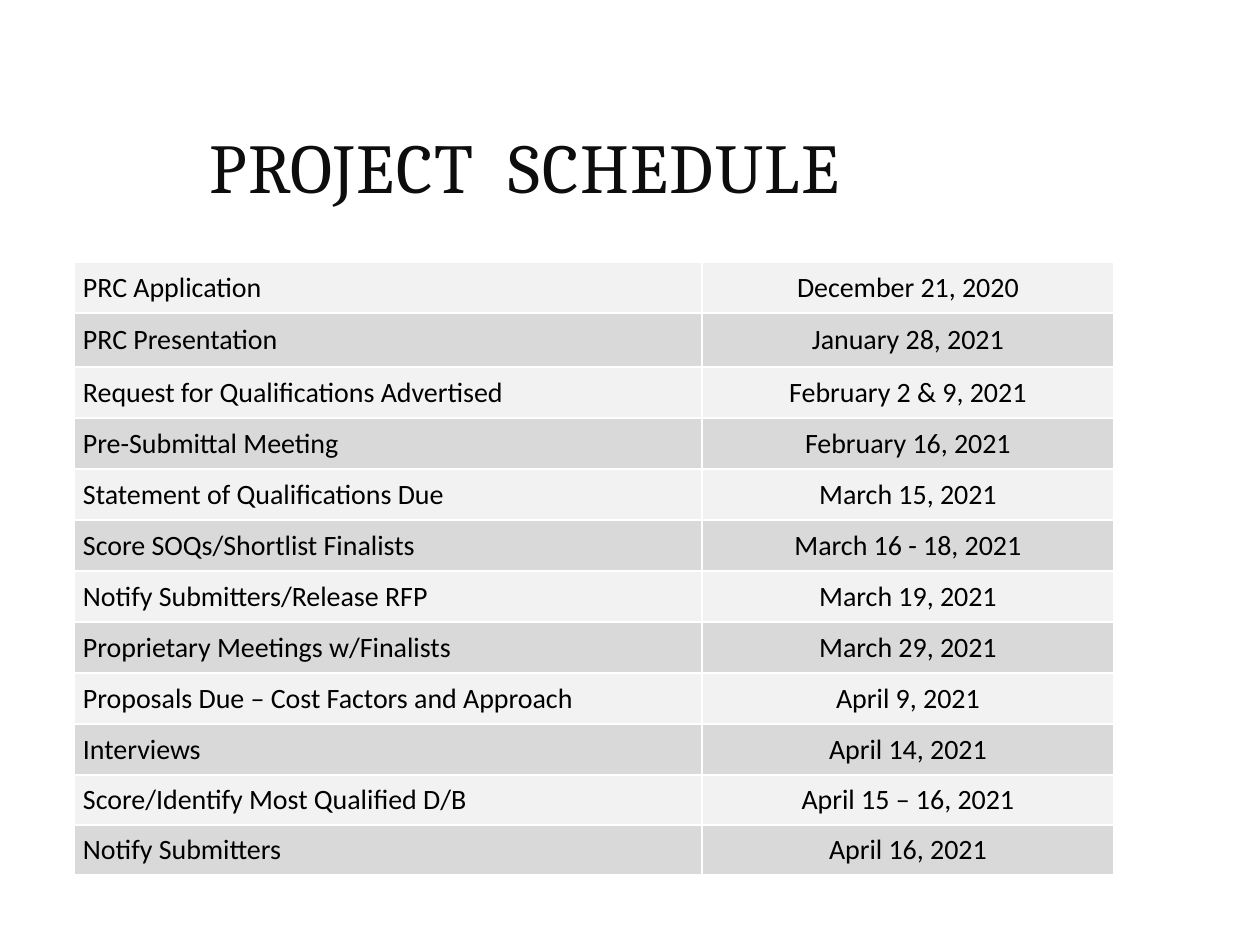
from pptx import Presentation
from pptx.dml.color import RGBColor
from pptx.enum.text import MSO_ANCHOR, MSO_AUTO_SIZE, PP_ALIGN
from pptx.util import Pt

TITLE = "PROJECT  SCHEDULE"
STEPS = [
    ("PRC Application", "December 21, 2020"),
    ("PRC Presentation", "January 28, 2021"),
    ("Request for Qualifications Advertised", "February 2 & 9, 2021"),
    ("Pre-Submittal Meeting", "February 16, 2021"),
    ("Statement of Qualifications Due", "March 15, 2021"),
    ("Score SOQs/Shortlist Finalists", "March 16 - 18, 2021"),
    ("Notify Submitters/Release RFP", "March 19, 2021"),
    ("Proprietary Meetings w/Finalists", "March 29, 2021"),
    ("Proposals Due – Cost Factors and Approach", "April 9, 2021"),
    ("Interviews", "April 14, 2021"),
    ("Score/Identify Most Qualified D/B", "April 15 – 16, 2021"),
    ("Notify Submitters", "April 16, 2021"),
]
COLS = [628, 412]
ROWS = [51, 54] + [51] * 8 + [50] * 2
ALIGNS = [PP_ALIGN.LEFT, PP_ALIGN.CENTER]

INK = RGBColor(0x0D, 0x0D, 0x0D)
BLACK = RGBColor(0, 0, 0)
BANDS = [RGBColor(0xF2, 0xF2, 0xF2), RGBColor(0xD9, 0xD9, 0xD9)]


def px(n):
    return n * 914400 // 126


def style(para, font, size, color, align):
    para.alignment = align
    para.font.name = font
    para.font.size = Pt(size)
    para.font.color.rgb = color


deck = Presentation()
deck.slide_width, deck.slide_height = px(1260), px(945)
slide = deck.slides.add_slide(deck.slide_layouts[5])

# Title
title = slide.shapes.title
title.left, title.top, title.width, title.height = map(px, (0, 126, 1050, 94))
frame = title.text_frame
frame.text = TITLE
frame.auto_size = MSO_AUTO_SIZE.NONE
frame.vertical_anchor = MSO_ANCHOR.MIDDLE
head = frame.paragraphs[0]
style(head, "Cambria", 40, INK, PP_ALIGN.CENTER)
head.line_spacing = 0.8
head.runs[0].font._element.set("spc", "100")

# Schedule table
table = slide.shapes.add_table(
    len(STEPS), len(COLS), px(74), px(262), px(sum(COLS)), px(sum(ROWS))).table
table.first_row = table.horz_banding = False
for col, width in zip(table.columns, COLS):
    col.width = px(width)
for r, step in enumerate(STEPS):
    table.rows[r].height = px(ROWS[r])
    for c, text in enumerate(step):
        cell = table.cell(r, c)
        cell.text = text
        cell.vertical_anchor = MSO_ANCHOR.MIDDLE
        cell.margin_left = cell.margin_right = px(9)
        cell.margin_top = cell.margin_bottom = 0
        cell.fill.solid()
        cell.fill.fore_color.rgb = BANDS[r % 2]
        style(cell.text_frame.paragraphs[0], "Calibri", 16, BLACK, ALIGNS[c])

deck.save("out.pptx")
